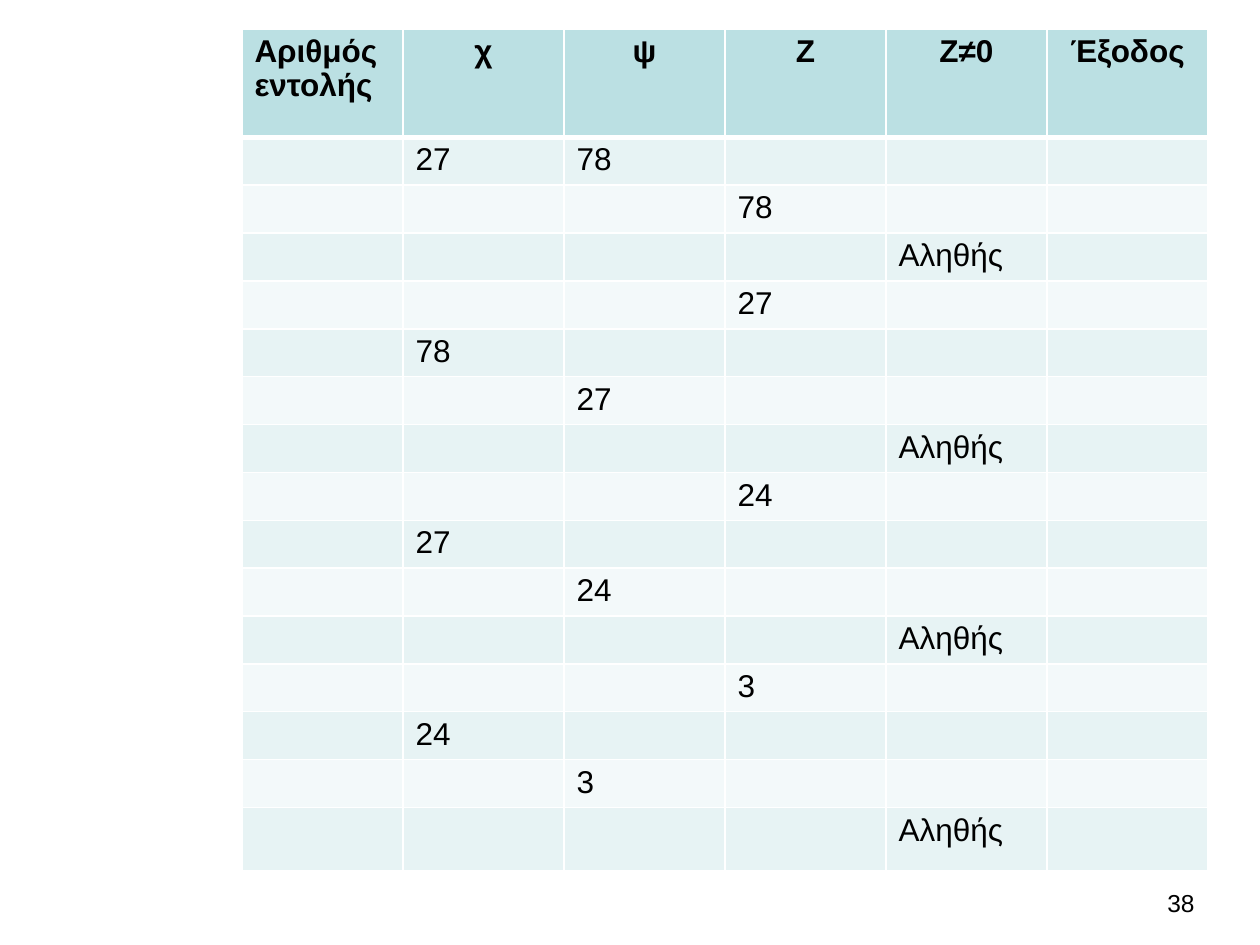
from lxml import etree
from pptx import Presentation
from pptx.dml.color import RGBColor
from pptx.enum.text import PP_ALIGN
from pptx.oxml import ns
from pptx.util import Inches, Pt

HEADERS = ["Αριθμός εντολής", "χ", "ψ", "Ζ", "Z≠0", "Έξοδος"]
# Each step of the trace changes some variables: {header: new value}
STEPS = [
    {"χ": "27", "ψ": "78"},
    {"Ζ": "78"},
    {"Z≠0": "Αληθής"},
    {"Ζ": "27"},
    {"χ": "78"},
    {"ψ": "27"},
    {"Z≠0": "Αληθής"},
    {"Ζ": "24"},
    {"χ": "27"},
    {"ψ": "24"},
    {"Z≠0": "Αληθής"},
    {"Ζ": "3"},
    {"χ": "24"},
    {"ψ": "3"},
    {"Z≠0": "Αληθής"},
]
PAGE_NUMBER = "38"

BLACK = RGBColor(0x00, 0x00, 0x00)
HEADER_FILL = RGBColor(0xBB, 0xE0, 0xE3)
BAND_FILLS = [RGBColor(0xE7, 0xF3, 0xF4), RGBColor(0xF3, 0xF9, 0xFA)]
BORDER = RGBColor(0xFF, 0xFF, 0xFF)

TABLE_WIDTH = 7.67
HEADER_HEIGHT, STEP_HEIGHT, LAST_HEIGHT = 0.86, 0.38, 0.5


def add_span(para, words, size, bold=False):
    span = para.add_run()
    span.text = words
    span.font.name = "Arial"
    span.font.size = Pt(size)
    span.font.bold = bold
    span.font.color.rgb = BLACK


def set_borders(cell, widths):
    """Draw the cell's edges; widths maps L, R, T, B to points."""
    properties = cell._tc.get_or_add_tcPr()
    for position, (side, width) in enumerate(widths.items()):
        line = etree.Element(ns.qn(f"a:ln{side}"), w=str(Pt(width)))
        fill = etree.SubElement(line, ns.qn("a:solidFill"))
        etree.SubElement(fill, ns.qn("a:srgbClr"), val=str(BORDER))
        properties.insert(position, line)


def fill_cell(cell, words, row, column):
    is_header = row == 0
    cell.fill.solid()
    cell.fill.fore_color.rgb = HEADER_FILL if is_header else BAND_FILLS[(row - 1) % 2]
    # Empty cells need no top margin, so they never stretch their row
    cell.margin_top = Inches(0.05 if words else 0)
    set_borders(cell, {"L": 1, "R": 1, "T": 3 if row == 1 else 1, "B": 3 if is_header else 1})
    para = cell.text_frame.paragraphs[0]
    para.line_spacing = 0.97
    if is_header and column > 0:
        para.alignment = PP_ALIGN.CENTER
    if words:
        add_span(para, words, 18, bold=is_header)


def add_trace_table(page):
    rows = [HEADERS] + [[step.get(name, "") for name in HEADERS] for step in STEPS]
    heights = [HEADER_HEIGHT] + [STEP_HEIGHT] * (len(STEPS) - 1) + [LAST_HEIGHT]
    table = page.shapes.add_table(
        len(rows), len(HEADERS), Inches(1.92), Inches(0.23),
        Inches(TABLE_WIDTH), Inches(sum(heights))).table
    for column in table.columns:
        column.width = Inches(TABLE_WIDTH / len(HEADERS))
    for r, (values, height) in enumerate(zip(rows, heights)):
        table.rows[r].height = Inches(height)
        for c, words in enumerate(values):
            fill_cell(table.cell(r, c), words, r, c)


def add_page_number(page):
    box = page.shapes.add_textbox(Inches(8.08), Inches(7), Inches(1.5), Inches(0.5))
    box.text_frame.word_wrap = True
    para = box.text_frame.paragraphs[0]
    para.alignment = PP_ALIGN.RIGHT
    add_span(para, PAGE_NUMBER, 14)


def main():
    deck = Presentation()
    deck.slide_width, deck.slide_height = Inches(10), Inches(7.5)
    page = deck.slides.add_slide(deck.slide_layouts[6])
    add_trace_table(page)
    add_page_number(page)
    deck.save("out.pptx")


if __name__ == "__main__":
    main()
